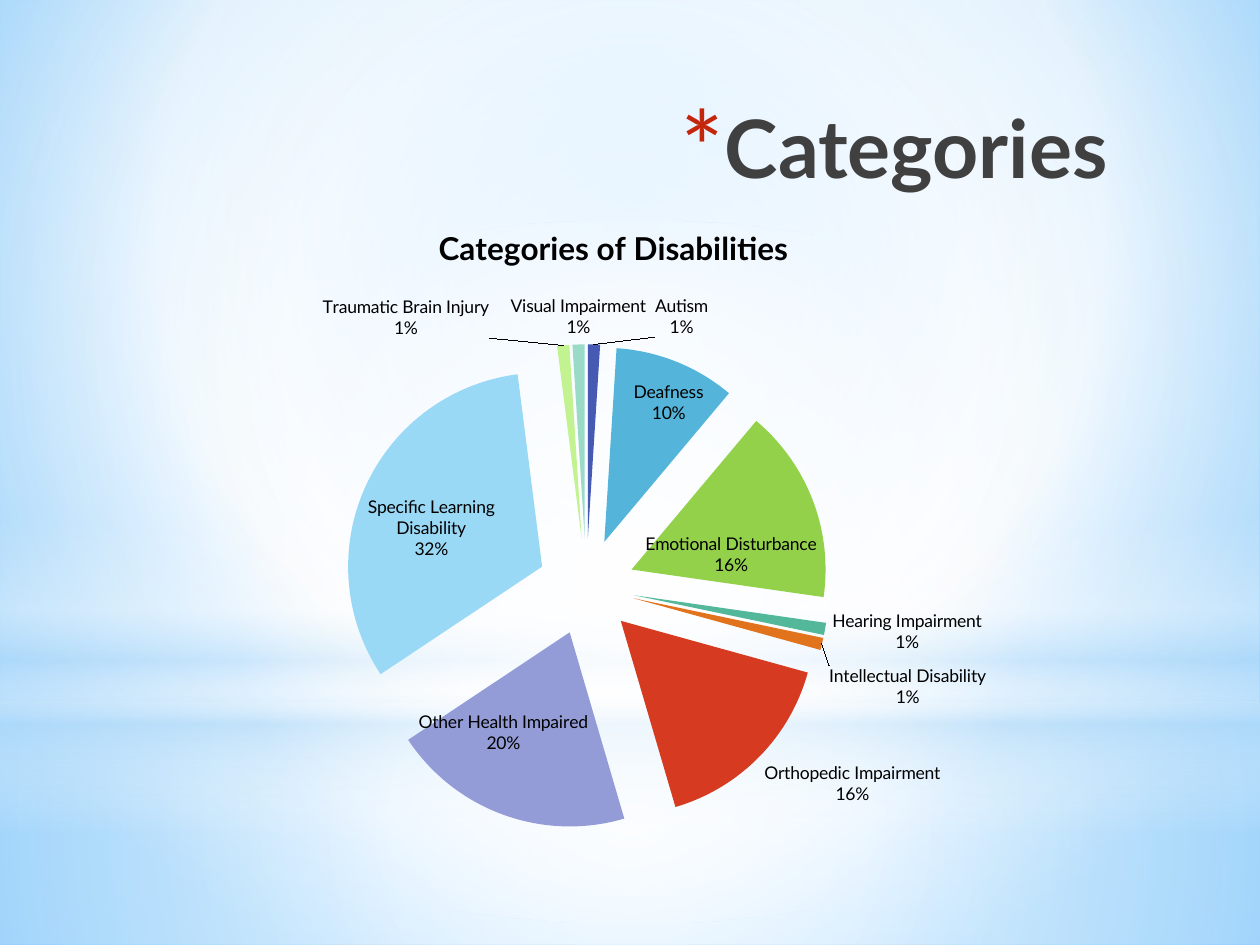
from dataclasses import dataclass

from lxml import etree
from pptx import Presentation
from pptx.chart.data import CategoryChartData
from pptx.dml.color import RGBColor
from pptx.enum import chart as charts, shapes, text
from pptx.oxml import ns, parse_xml
from pptx.util import Cm, Pt


@dataclass(frozen=True)
class Theme:
    font: str = "Lato"
    ink: str = "000000"
    heading: str = "404040"
    bullet: str = "C3260C"
    white: str = "FFFFFF"
    haze: str = "B4DCFA"
    title_size: int = 46
    chart_title_size: int = 18
    label_size: int = 10


THEME = Theme()
CENTER = (50, 50, 50, 50)

# Category, share, slice colour
DISABILITIES = [
    ("Autism", 1, "465AB3"),
    ("Deafness", 10, "54B4D9"),
    ("Emotional Disturbance", 16, "94D14B"),
    ("Hearing Impairment", 1, "52B899"),
    ("Intellectual Disability", 1, "E2731D"),
    ("Orthopedic Impairment", 16, "D63A20"),
    ("Other Health Impaired", 20, "939CD6"),
    ("Specific Learning Disability", 32, "9AD9F6"),
    ("Traumatic Brain Injury", 1, "C3F291"),
    ("Visual Impairment", 1, "9ADBC8"),
]


def gradient(stops, focus=None):
    """Return a gradFill: circular around focus (l, t, r, b in %), else top to bottom."""
    fill = etree.Element(ns.qn("a:gradFill"), rotWithShape="1")
    stop_list = etree.SubElement(fill, ns.qn("a:gsLst"))
    for pos, color, alpha in stops:
        gs = etree.SubElement(stop_list, ns.qn("a:gs"), pos=str(pos * 1000))
        clr = etree.SubElement(gs, ns.qn("a:srgbClr"), val=color)
        if alpha < 100:
            etree.SubElement(clr, ns.qn("a:alpha"), val=str(alpha * 1000))
    if focus:
        circle = etree.SubElement(fill, ns.qn("a:path"), path="circle")
        sides = {side: str(v * 1000) for side, v in zip("ltrb", focus)}
        etree.SubElement(circle, ns.qn("a:fillToRect"), **sides)
    else:
        etree.SubElement(fill, ns.qn("a:lin"), ang="5400000", scaled="0")
    return parse_xml(etree.tostring(fill))


def use_gradient(fill, owner, stops, focus=None):
    fill.solid()
    solid = next(owner.iter(ns.qn("a:solidFill")))
    solid.getparent().replace(solid, gradient(stops, focus))


def add_glow(s, kind, top, height, stops, focus=None):
    """Add a full-width translucent shape."""
    sp = s.shapes.add_shape(kind, 0, Cm(top), Cm(25.4), Cm(height))
    sp.shadow.inherit = False
    sp.line.fill.background()
    use_gradient(sp.fill, sp._element.spPr, stops, focus)


def add_backdrop(s):
    white, haze = THEME.white, THEME.haze
    rect, oval = shapes.MSO_SHAPE.RECTANGLE, shapes.MSO_SHAPE.OVAL
    use_gradient(s.background.fill, s._element,
                 [(0, "9ED5FF", 100), (60, white, 100), (100, "5BB9FF", 100)],
                 (20, 10, 20, 60))
    add_glow(s, rect, 14.17, 4.88,
             [(0, white, 91), (37, white, 76), (100, haze, 79)], CENTER)
    add_glow(s, rect, 0, 14.17,
             [(0, white, 89), (48, white, 62), (100, haze, 79)], CENTER)
    add_glow(s, rect, 10.46, 6.35,
             [(0, white, 0), (29, white, 30), (45, haze, 40),
              (55, white, 26), (65, haze, 60), (100, white, 0)])
    add_glow(s, oval, 4.45, 14.17, [(0, white, 100), (56, white, 0)], CENTER)


def style_font(font, size, color, bold=False):
    font.name, font.size, font.bold = THEME.font, Pt(size), bold
    font.color.rgb = RGBColor.from_string(color)


def write(tf, content, *, size, color, bold=False, align=None):
    p = tf.paragraphs[0]
    p.alignment = align
    r = p.add_run()
    r.text = content
    style_font(r.font, size, color, bold)
    return p


def add_bullet(p, char, color, percent, indent):
    pPr = p._p.get_or_add_pPr()
    pPr.set("marL", str(indent))
    pPr.set("indent", str(-indent))
    clr = etree.SubElement(pPr, ns.qn("a:buClr"))
    etree.SubElement(clr, ns.qn("a:srgbClr"), val=color)
    etree.SubElement(pPr, ns.qn("a:buSzPct"), val=str(percent * 1000))
    etree.SubElement(pPr, ns.qn("a:buFont"), typeface=THEME.font)
    etree.SubElement(pPr, ns.qn("a:buChar"), char=char)


def set_title(s, content):
    title = s.shapes.title
    title.left, title.top, title.width, title.height = Cm(2.8), Cm(1.88), Cm(19.78), Cm(2.13)
    tf = title.text_frame
    tf.auto_size = text.MSO_AUTO_SIZE.NONE
    tf.vertical_anchor = text.MSO_ANCHOR.MIDDLE
    p = write(tf, content, size=THEME.title_size, color=THEME.heading,
              bold=True, align=text.PP_ALIGN.RIGHT)
    add_bullet(p, "*", THEME.bullet, 128, Cm(0.89))
    s.shapes._spTree.append(title._element)  # in front of the backdrop


def place_plot(chart, **box):
    """Fix the inner plot area, in fractions of the chart."""
    area = chart._chartSpace.chart.plotArea
    for old in area.findall(ns.qn("c:layout")):
        area.remove(old)
    layout = etree.Element(ns.qn("c:layout"))
    manual = etree.SubElement(layout, ns.qn("c:manualLayout"))
    settings = {"layoutTarget": "inner", "xMode": "edge", "yMode": "edge", **box}
    for name, value in settings.items():
        etree.SubElement(manual, ns.qn(f"c:{name}"), val=str(value))
    area.insert(0, layout)


def add_pie(s, title, rows, explosion):
    data = CategoryChartData()
    data.categories = [name for name, _, _ in rows]
    data.add_series("Series 1", [share for _, share, _ in rows])
    chart = s.shapes.add_chart(charts.XL_CHART_TYPE.PIE, Cm(1.47), Cm(4.01),
                               Cm(21.79), Cm(13.97), data).chart
    style_font(chart.font, THEME.label_size, THEME.ink)
    chart.has_legend = False
    chart.has_title = True
    write(chart.chart_title.text_frame, title, size=THEME.chart_title_size,
          color=THEME.ink, bold=True)
    place_plot(chart, x=0.25, y=0.21, w=0.45, h=0.7)

    plot = chart.plots[0]
    plot.vary_by_categories = True
    series = plot.series[0]
    for i, (_, _, color) in enumerate(rows):
        fill = series.points[i].format.fill
        fill.solid()
        fill.fore_color.rgb = RGBColor.from_string(color)
    exploded = etree.Element(ns.qn("c:explosion"), val=str(explosion))
    series._element.find(ns.qn("c:dPt")).addprevious(exploded)
    for point in series._element.findall(ns.qn("c:dPt")):
        point.find(ns.qn("c:spPr")).addprevious(
            etree.Element(ns.qn("c:explosion"), val=str(explosion)))

    labels = series.data_labels
    labels.show_category_name = labels.show_percentage = True
    labels.show_value = False
    labels.position = charts.XL_LABEL_POSITION.BEST_FIT
    style_font(labels.font, THEME.label_size, THEME.ink)
    dLbls = labels._element
    for name, value in (("separator", "\n"), ("showLeaderLines", None)):
        for old in dLbls.findall(ns.qn(f"c:{name}")):
            dLbls.remove(old)
        element = etree.SubElement(dLbls, ns.qn(f"c:{name}"))
        if value:
            element.text = value
        else:
            element.set("val", "1")


def main():
    prs = Presentation()
    prs.slide_width, prs.slide_height = Cm(25.4), Cm(19.05)
    s = prs.slides.add_slide(prs.slide_layouts[5])
    add_backdrop(s)
    set_title(s, "Categories")
    add_pie(s, "Categories of Disabilities", DISABILITIES, explosion=25)
    prs.save("out.pptx")


if __name__ == "__main__":
    main()
